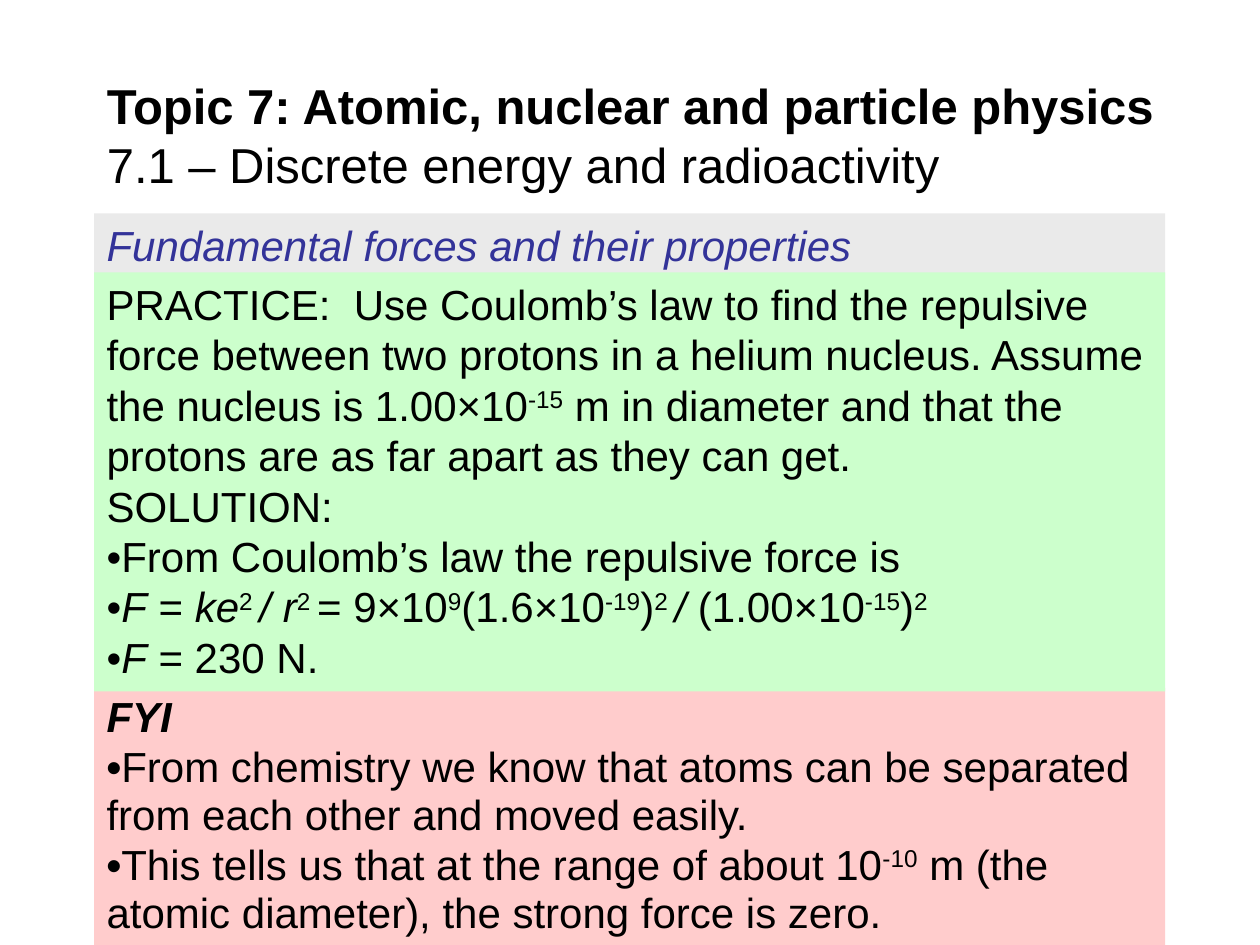
import pptx
import pptx.dml.color
import pptx.enum.shapes
import pptx.enum.text
import pptx.util

Cm, Pt = pptx.util.Cm, pptx.util.Pt
RGBColor = pptx.dml.color.RGBColor
LEFT = pptx.enum.text.PP_ALIGN.LEFT
TOP = pptx.enum.text.MSO_ANCHOR.TOP
MIDDLE = pptx.enum.text.MSO_ANCHOR.MIDDLE

COLORS = {
    "text": "000000",
    "heading": "333399",
    "grey": "EAEAEA",
    "green": "CCFFCC",
    "pink": "FFCCCC",
}


def write_spans(para, spans, size, color):
    """Add (text, style) spans; style letters: b bold, i italic, s superscript."""
    for text, style in spans:
        span = para.add_run()
        span.text = text
        formats = {"name": "Arial", "size": Pt(size),
                   "bold": "b" in style, "italic": "i" in style}
        for name, value in formats.items():
            setattr(span.font, name, value)
        span.font.color.rgb = RGBColor.from_string(COLORS[color])
        if "s" in style:
            span._r.get_or_add_rPr().set("baseline", "30000")


def format_frame(frame, anchor):
    formats = {"word_wrap": True, "vertical_anchor": anchor,
               "auto_size": pptx.enum.text.MSO_AUTO_SIZE.NONE}
    for name, value in formats.items():
        setattr(frame, name, value)


deck = pptx.Presentation()
deck.slide_width, deck.slide_height = Cm(25.4), Cm(19.05)
page = deck.slides.add_slide(deck.slide_layouts[5])

# Title
title = page.shapes.title
title.left, title.top, title.width, title.height = Cm(1.9), Cm(1.47), Cm(22.2), Cm(2.49)
format_frame(title.text_frame, MIDDLE)
para = title.text_frame.paragraphs[0]
para.alignment = LEFT
write_spans(para, [("Topic 7: Atomic, nuclear and particle physics", "b")], 28, "text")
para.add_line_break()
write_spans(para, [("7.1 – Discrete energy and radioactivity", "")], 28, "text")

# Panels, back to front
fyi = [
    [("FYI", "bi")],
    [("•", "b"),
     ("From chemistry we know that atoms can be separated from each other "
      "and moved easily.", "")],
    [("•", "b"), ("This tells us that at the range of about 10", ""), ("-10", "s"),
     (" m (the atomic diameter), the strong force is zero.", "")],
]
heading = [[("Fundamental forces and their properties", "i")]]
practice = [
    [("PRACTICE:  Use Coulomb’s law to find the repulsive force between two protons "
      "in a helium nucleus. Assume the nucleus is 1.00×10", ""), ("-15", "s"),
     (" m in diameter and that the protons are as far apart as they can get.", "")],
    [("SOLUTION:", "")],
    [("•From Coulomb’s law the repulsive force is", "")],
    [("•", ""), ("F", "i"), (" = ", ""), ("ke", "i"), ("2 ", "s"), ("/ r", "i"),
     ("2 ", "s"), ("= 9×10", ""), ("9", "s"), ("(1.6×10", ""), ("-19", "s"),
     (")", ""), ("2 ", "s"), ("/", "i"), (" (1.00×10", ""), ("-15", "s"),
     (")", ""), ("2", "s")],
    [("•", ""), ("F", "i"), (" = 230 N.", "")],
]
panels = [
    # top, height, fill, text colour, line spacing, space before, paragraphs
    (13.87, 5.18, "pink", "text", 0.95, 1.2, fyi),
    (4.3, 1.95, "grey", "heading", 1.0, 0, heading),
    (5.49, 8.45, "green", "text", 1.0, 0, practice),
]
for top, height, fill, color, spacing, before, paragraphs in panels:
    box = page.shapes.add_shape(pptx.enum.shapes.MSO_SHAPE.RECTANGLE,
                                Cm(1.9), Cm(top), Cm(21.59), Cm(height))
    box.shadow.inherit = False
    box.fill.solid()
    box.fill.fore_color.rgb = RGBColor.from_string(COLORS[fill])
    box.line.fill.background()
    frame = box.text_frame
    format_frame(frame, TOP)
    for index, spans in enumerate(paragraphs):
        para = frame.add_paragraph() if index else frame.paragraphs[0]
        formats = {"alignment": LEFT, "line_spacing": spacing, "space_before": Pt(before)}
        for name, value in formats.items():
            setattr(para, name, value)
        write_spans(para, spans, 24, color)

deck.save("out.pptx")
